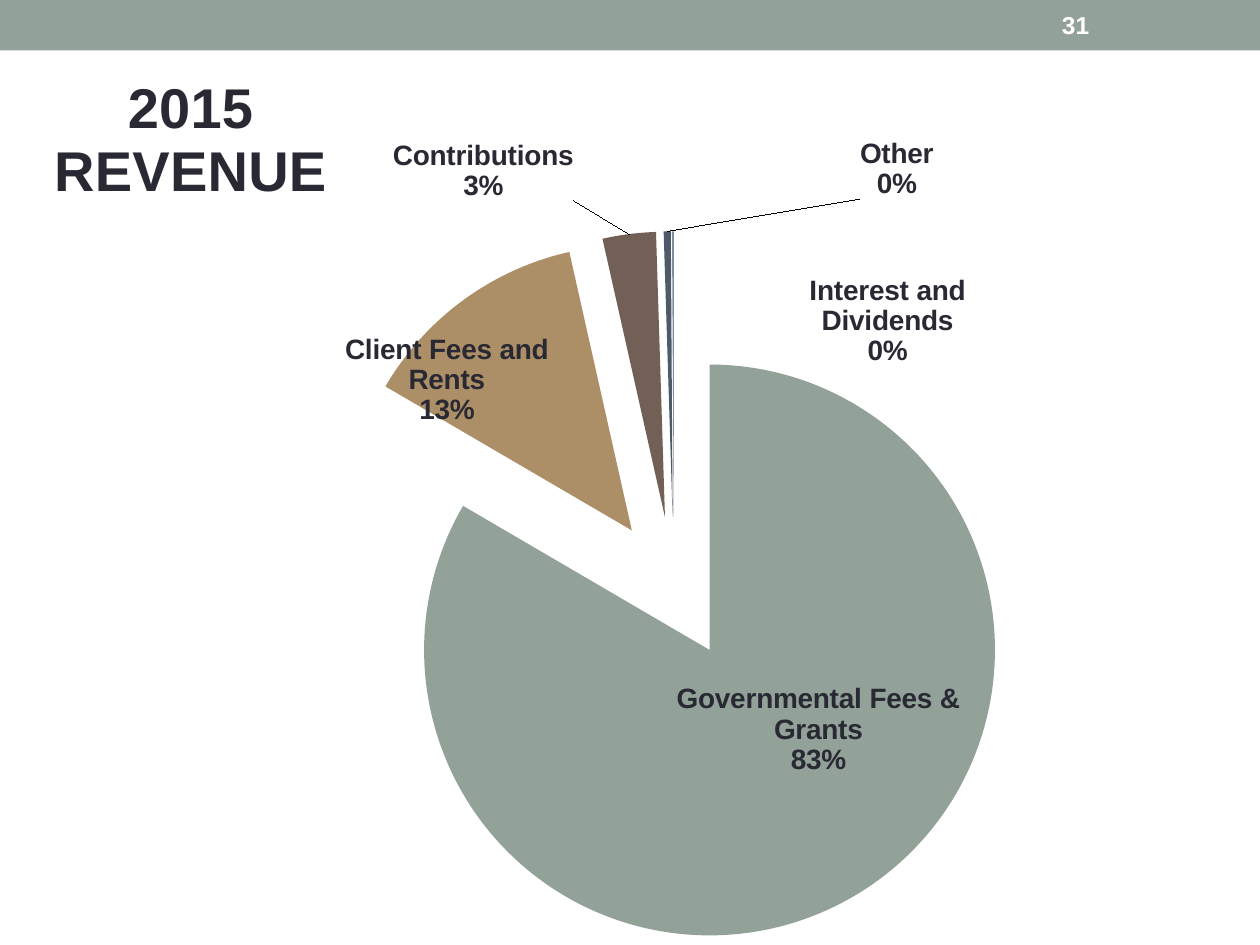
from dataclasses import dataclass

from lxml import etree
from pptx import Presentation
from pptx.chart.data import CategoryChartData
from pptx.dml.color import RGBColor
from pptx.enum.chart import XL_CHART_TYPE, XL_LABEL_POSITION
from pptx.enum.shapes import MSO_SHAPE
from pptx.enum.text import MSO_ANCHOR, PP_ALIGN
from pptx.oxml import parse_xml
from pptx.oxml.ns import nsdecls, qn
from pptx.util import Inches, Pt


@dataclass(frozen=True)
class Theme:
    font: str = "Arial"
    ink: str = "292934"
    white: str = "FFFFFF"
    band: str = "93A299"
    title_size: int = 32
    label_size: int = 16
    number_size: int = 14
    base_size: int = 10


THEME = Theme()

# category, value, slice colour, label shift from the slice centre (share of chart)
# The last two round to 0 % but still need a sliver to carry their labels.
REVENUE = [
    ("Governmental Fees & Grants", 83, "93A299", (0.03, -0.05)),
    ("Client Fees and Rents", 13, "AD8F67", (-0.08, -0.04)),
    ("Contributions", 3, "726056", (-0.13, -0.23)),
    ("Other", 0.4, "4C5A6A", (0.18, -0.23)),
    ("Interest and Dividends", 0.1, "808DA0", (0.17, -0.06)),
]


def style_font(font, size, color, bold=False):
    font.name = THEME.font
    font.size = Pt(size)
    font.bold = bold
    font.color.rgb = RGBColor.from_string(color)


def manual_layout(x, y, w=None, h=None, edge=False):
    """Return a c:layout; with a size it fixes the inner plot area."""
    sized = w is not None
    parts = [("layoutTarget", "inner")] if sized else []
    if sized or edge:
        parts += [("xMode", "edge"), ("yMode", "edge")]
    parts += [("x", x), ("y", y)]
    if sized:
        parts += [("w", w), ("h", h)]
    layout = parse_xml(f"<c:layout {nsdecls('c')}><c:manualLayout/></c:layout>")
    for tag, value in parts:
        etree.SubElement(layout[0], qn(f"c:{tag}")).set("val", str(value))
    return layout


def add_header(slide, x, y, w, h):
    sp = slide.shapes.add_shape(MSO_SHAPE.RECTANGLE, x, y, w, h)
    sp.shadow.inherit = False
    sp.fill.solid()
    sp.fill.fore_color.rgb = RGBColor.from_string(THEME.band)
    sp.line.fill.background()

    box = slide.shapes.add_textbox(x + Inches(8.33), y + Inches(0.02),
                                   Inches(1.17), h - Inches(0.04))
    tf = box.text_frame
    tf.word_wrap = True
    tf.vertical_anchor = MSO_ANCHOR.MIDDLE
    r = tf.paragraphs[0].add_run()
    r.text = "31"
    style_font(r.font, THEME.number_size, THEME.white, bold=True)


def add_title(chart):
    tf = chart.chart_title.text_frame
    for i, line in enumerate(("2015", "REVENUE")):
        p = tf.add_paragraph() if i else tf.paragraphs[0]
        p.alignment = PP_ALIGN.CENTER
        r = p.add_run()
        r.text = line
        style_font(r.font, THEME.title_size, THEME.ink, bold=True)
    title = chart.chart_title._element
    for old in title.findall(qn("c:layout")):
        title.remove(old)
    title.find(qn("c:tx")).addnext(manual_layout(0.04, 0.02, edge=True))
    chart.chart_title.include_in_layout = False


def add_labels(series):
    """Show category and percentage on each slice, shifted to its own place."""
    labels = series.data_labels
    style_font(labels.font, THEME.label_size, THEME.ink, bold=True)
    labels.show_category_name = True
    labels.show_percentage = True
    labels.show_value = False
    labels.position = XL_LABEL_POSITION.CENTER
    element = labels._element
    separator = etree.Element(qn("c:separator"))
    separator.text = "\n"
    element.find(qn("c:showBubbleSize")).addnext(separator)
    leader = element.find(qn("c:showLeaderLines"))
    if leader is None:
        leader = etree.Element(qn("c:showLeaderLines"))
        separator.addnext(leader)
    leader.set("val", "1")

    shared = ("txPr", "dLblPos", "showLegendKey", "showVal", "showCatName",
              "showSerName", "showPercent", "showBubbleSize", "separator")
    for i, (_, _, _, shift) in enumerate(REVENUE):
        label = etree.Element(qn("c:dLbl"))
        etree.SubElement(label, qn("c:idx")).set("val", str(i))
        label.append(manual_layout(*shift))
        for tag in shared:
            source = element.find(qn(f"c:{tag}"))
            label.append(parse_xml(etree.tostring(source)))
        element.insert(i, label)


def add_revenue_pie(slide, x, y, w, h):
    data = CategoryChartData()
    data.categories = [name for name, *_ in REVENUE]
    data.add_series("Series 1", [value for _, value, *_ in REVENUE])
    chart = slide.shapes.add_chart(XL_CHART_TYPE.PIE, x, y, w, h, data).chart
    style_font(chart.font, THEME.base_size, THEME.ink)
    chart.has_legend = False
    add_title(chart)

    plot = chart.plots[0]
    plot.vary_by_categories = True
    series = plot.series[0]
    for i, (_, _, color, _) in enumerate(REVENUE):
        fill = series.points[i].format.fill
        fill.solid()
        fill.fore_color.rgb = RGBColor.from_string(color)
    explosion = etree.Element(qn("c:explosion"))
    explosion.set("val", "25")
    series._element.find(qn("c:dPt")).addprevious(explosion)
    add_labels(series)

    area = chart._chartSpace.chart.plotArea
    for old in area.findall(qn("c:layout")):
        area.remove(old)
    area.insert(0, manual_layout(0.23, 0.2, 0.61, 0.8))


def main():
    prs = Presentation()
    prs.slide_width, prs.slide_height = Inches(10), Inches(7.5)
    slide = prs.slides.add_slide(prs.slide_layouts[6])
    add_header(slide, 0, 0, prs.slide_width, Inches(0.4))
    top = Inches(0.42)
    add_revenue_pie(slide, 0, top, prs.slide_width, prs.slide_height - top)
    prs.save("out.pptx")


if __name__ == "__main__":
    main()
